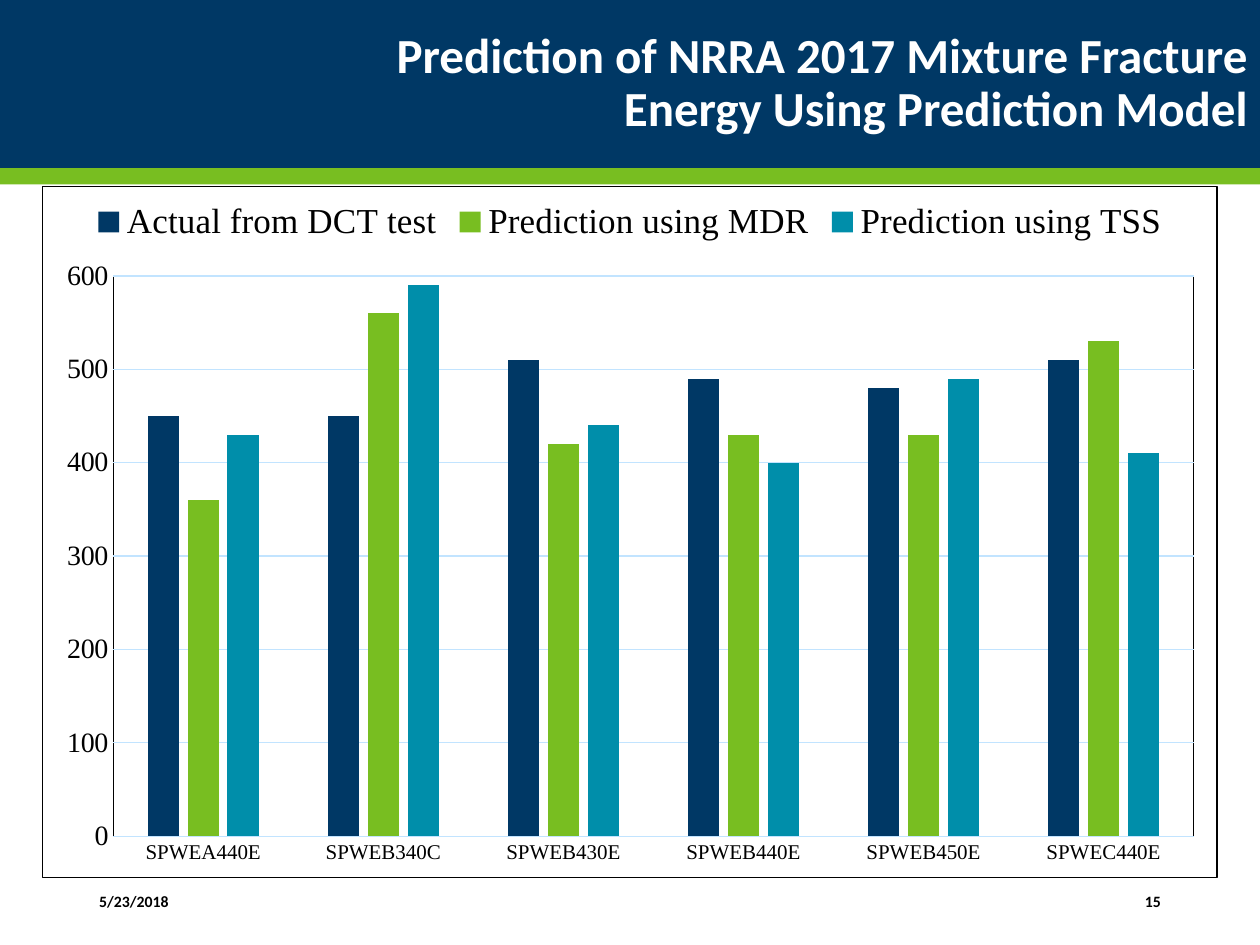
from lxml.etree import fromstring
from pptx import Presentation
from pptx.chart.data import CategoryChartData
from pptx.dml.color import RGBColor
from pptx.enum.chart import XL_CHART_TYPE, XL_LEGEND_POSITION, XL_TICK_MARK
from pptx.enum.shapes import MSO_SHAPE
from pptx.enum.text import MSO_ANCHOR, PP_ALIGN
from pptx.oxml.ns import nsdecls, qn
from pptx.util import Cm, Pt

NAVY = RGBColor(0x00, 0x38, 0x65)
GREEN = RGBColor(0x78, 0xBE, 0x21)
TEAL = RGBColor(0x00, 0x8E, 0xAA)
PALE_BLUE = RGBColor(0xC2, 0xE4, 0xFF)
BLACK = RGBColor(0, 0, 0)
WHITE = RGBColor(0xFF, 0xFF, 0xFF)

MIXTURES = ["SPWEA440E", "SPWEB340C", "SPWEB430E",
            "SPWEB440E", "SPWEB450E", "SPWEC440E"]
FRACTURE_ENERGY = [
    ("Actual from DCT test", NAVY, [450, 450, 510, 490, 480, 510]),
    ("Prediction using MDR", GREEN, [360, 560, 420, 430, 430, 530]),
    ("Prediction using TSS", TEAL, [430, 590, 440, 400, 490, 410]),
]


def outlined_area(fill):
    """Return a c:spPr with the given fill XML and a thin black border."""
    return fromstring(
        f'<c:spPr {nsdecls("c", "a")}>{fill}<a:ln w="9525"><a:solidFill>'
        f'<a:srgbClr val="{BLACK}"/></a:solidFill></a:ln></c:spPr>')


def inner_layout(x, y, w, h):
    """Return a c:layout that places the plot by fractions of the chart."""
    sizes = "".join(f'<c:{tag} val="{value}"/>'
                    for tag, value in zip("xywh", (x, y, w, h)))
    return fromstring(
        f'<c:layout {nsdecls("c")}><c:manualLayout><c:layoutTarget val="inner"/>'
        f'<c:xMode val="edge"/><c:yMode val="edge"/>{sizes}'
        '</c:manualLayout></c:layout>')


class SlideBuilder:
    text_font = "Calibri"
    chart_font = "Times New Roman"

    def __init__(self, prs):
        self.s = prs.slides.add_slide(prs.slide_layouts[5])

    def style(self, font, name, size, color=BLACK, bold=False):
        font.name, font.size, font.bold = name, Pt(size), bold
        font.color.rgb = color

    def band(self, top, height, color):
        sp = self.s.shapes.add_shape(
            MSO_SHAPE.RECTANGLE, 0, Cm(top), Cm(25.4), Cm(height))
        sp.shadow.inherit = False
        sp.fill.solid()
        sp.fill.fore_color.rgb = color
        sp.line.fill.background()

    def set_text(self, sp, text, size, color, align):
        tf = sp.text_frame
        tf.word_wrap = True
        tf.vertical_anchor = MSO_ANCHOR.MIDDLE
        tf.text = text
        p = tf.paragraphs[0]
        p.alignment = align
        self.style(p.runs[0].font, self.text_font, size, color, bold=True)
        return p

    def title(self, text, left, top, width, height):
        sp = self.s.shapes.title
        sp.left, sp.top, sp.width, sp.height = map(Cm, (left, top, width, height))
        self.set_text(sp, text, 28, WHITE, PP_ALIGN.RIGHT).line_spacing = 0.9
        # Bring the title in front of the bands
        sp.element.getparent().append(sp.element)

    def footer(self, text, left, width, align):
        sp = self.s.shapes.add_textbox(Cm(left), Cm(17.65), Cm(width), Cm(1.02))
        self.set_text(sp, text, 9, BLACK, align)

    def column_chart(self, left, top, width, height, categories, series):
        data = CategoryChartData()
        data.categories = categories
        for name, _, values in series:
            data.add_series(name, values)
        chart = self.s.shapes.add_chart(
            XL_CHART_TYPE.COLUMN_CLUSTERED, Cm(left), Cm(top),
            Cm(width), Cm(height), data).chart
        self.style(chart.font, self.chart_font, 12)
        chart.has_title = False
        chart.has_legend = True
        chart.legend.position = XL_LEGEND_POSITION.TOP
        chart.legend.include_in_layout = False
        self.style(chart.legend.font, self.chart_font, 20)

        plot = chart.plots[0]
        plot.gap_width, plot.overlap, plot.vary_by_categories = 219, -27, False
        for bars, (_, color, _) in zip(plot.series, series):
            bars.format.fill.solid()
            bars.format.fill.fore_color.rgb = color

        self.axes(chart)
        self.frame(chart)

    def axes(self, chart):
        cat, val = chart.category_axis, chart.value_axis
        for axis, size in ((cat, 12), (val, 16)):
            axis.major_tick_mark = axis.minor_tick_mark = XL_TICK_MARK.NONE
            self.style(axis.tick_labels.font, self.chart_font, size)
        val.minimum_scale, val.maximum_scale, val.major_unit = 0, 600, 100
        val.has_major_gridlines = True
        val.format.line.fill.background()
        for line in (cat.format.line, val.major_gridlines.format.line):
            line.color.rgb = PALE_BLUE
            line.width = Pt(0.75)

    def frame(self, chart):
        """Border the chart and its plot, and fix the plot's place."""
        chart_el = chart.element.find(qn("c:chart"))
        chart_el.addnext(outlined_area(
            f'<a:solidFill><a:srgbClr val="{WHITE}"/></a:solidFill>'))
        plot_area = chart_el.find(qn("c:plotArea"))
        for layout in plot_area.findall(qn("c:layout")):
            plot_area.remove(layout)
        plot_area.insert(0, inner_layout(0.06, 0.13, 0.92, 0.81))
        plot_area.append(outlined_area("<a:noFill/>"))


def main():
    prs = Presentation()
    prs.slide_width, prs.slide_height = Cm(25.4), Cm(19.05)
    slide = SlideBuilder(prs)
    slide.band(0, 3.39, NAVY)
    slide.band(3.39, 0.33, GREEN)
    slide.title("Prediction of NRRA 2017 Mixture Fracture Energy "
                "Using Prediction Model", 5.5, 0.42, 19.9, 2.54)
    slide.footer("5/23/2018", 1.75, 2.82, PP_ALIGN.LEFT)
    slide.footer("15", 20.6, 3.05, PP_ALIGN.RIGHT)
    slide.column_chart(0.85, 3.74, 23.7, 13.97, MIXTURES, FRACTURE_ENERGY)
    prs.save("out.pptx")


if __name__ == "__main__":
    main()
